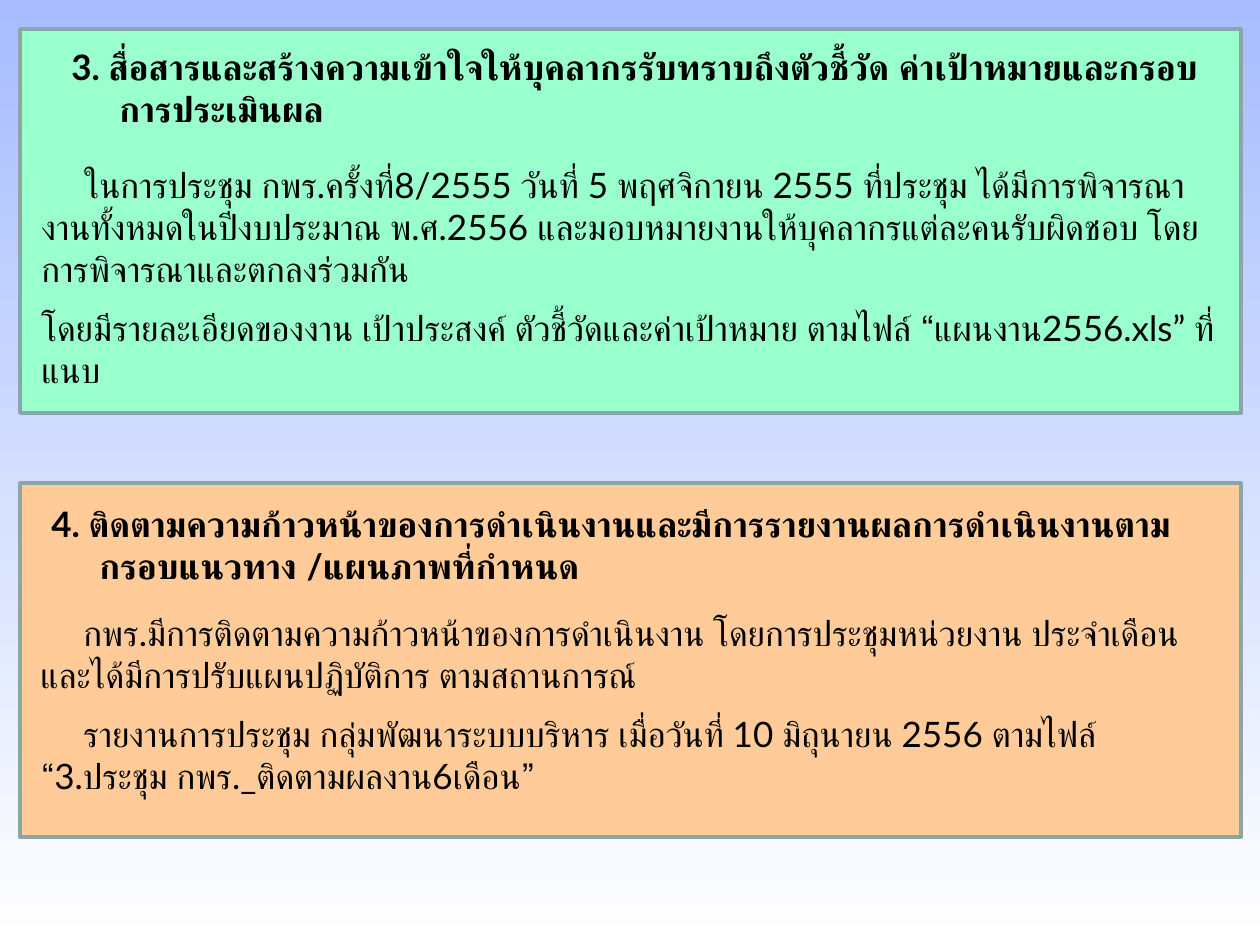
"""Build a slide with two panels on communicating and following up work plans."""
import pptx
import pptx.dml.color
import pptx.enum.shapes
import pptx.enum.text
import pptx.util

THEME = {
    "sky": ("A7BCFF", "FFFFFF"), "border": "8AA6A8", "text": "000000",
    "font": "Lato", "size": 20, "gap": 10, "line": 2,
}
HANG, FIRST = 48, 43

PANELS = [
    {
        "fill": "FFCC99", "box": (20, 483, 1221, 354),
        "head": "4. ติดตามความก้าวหน้าของการดำเนินงานและมีการรายงานผลการดำเนินงานตามกรอบแนวทาง /แผนภาพที่กำหนด",
        "head_box": (39, 496, 1191, 97),
        "body": [
            ("กพร.มีการติดตามความก้าวหน้าของการดำเนินงาน โดยการประชุมหน่วยงาน ประจำเดือน และได้มีการปรับแผนปฏิบัติการ ตามสถานการณ์", FIRST),
            ("รายงานการประชุม กลุ่มพัฒนาระบบบริหาร เมื่อวันที่ 10 มิถุนายน 2556 ตามไฟล์ “3.ประชุม กพร._ติดตามผลงาน6เดือน”", FIRST),
        ],
        "body_box": (28, 605, 1207, 204),
    },
    {
        "fill": "99FFCC", "box": (20, 29, 1221, 384),
        "head": "3. สื่อสารและสร้างความเข้าใจให้บุคลากรรับทราบถึงตัวชี้วัด ค่าเป้าหมายและกรอบการประเมินผล",
        "head_box": (59, 39, 1162, 97),
        "body": [
            ("ในการประชุม กพร.ครั้งที่8/2555 วันที่ 5 พฤศจิกายน 2555 ที่ประชุม ได้มีการพิจารณางานทั้งหมดในปีงบประมาณ พ.ศ.2556 และมอบหมายงานให้บุคลากรแต่ละคนรับผิดชอบ โดยการพิจารณาและตกลงร่วมกัน", FIRST),
            ("โดยมีรายละเอียดของงาน เป้าประสงค์ ตัวชี้วัดและค่าเป้าหมาย ตามไฟล์ “แผนงาน2556.xls” ที่แนบ", 0),
        ],
        "body_box": (29, 157, 1207, 246),
    },
]


def px(n):
    return pptx.util.Emu(round(n * 914400 / 126))


def rgb(name):
    return pptx.dml.color.RGBColor.from_string(name)


def add_panel(s, fill, box):
    sp = s.shapes.add_shape(pptx.enum.shapes.MSO_SHAPE.RECTANGLE, *map(px, box))
    sp.shadow.inherit = False
    sp.fill.solid()
    sp.fill.fore_color.rgb = rgb(fill)
    sp.line.color.rgb = rgb(THEME["border"])
    sp.line.width = pptx.util.Pt(THEME["line"])


def add_text(s, box, paragraphs, bold=False, margin=0):
    tf = s.shapes.add_textbox(*map(px, box)).text_frame
    tf.word_wrap = True
    tf.auto_size = pptx.enum.text.MSO_AUTO_SIZE.SHAPE_TO_FIT_TEXT
    font = {"name": THEME["font"], "size": pptx.util.Pt(THEME["size"]), "bold": bold}
    for i, (text, indent) in enumerate(paragraphs):
        p = tf.add_paragraph() if i else tf.paragraphs[0]
        if i:
            p.space_before = pptx.util.Pt(THEME["gap"])
        pPr = p._p.get_or_add_pPr()
        for key, value in {"marL": margin, "indent": indent}.items():
            pPr.set(key, str(px(value)))
        r = p.add_run()
        r.text = text
        for key, value in font.items():
            setattr(r.font, key, value)
        r.font.color.rgb = rgb(THEME["text"])


def main():
    prs = pptx.Presentation()
    prs.slide_width, prs.slide_height = px(1260), px(945)
    s = prs.slides.add_slide(prs.slide_layouts[6])
    sky = s.background.fill
    sky.gradient()
    sky.gradient_angle = 270
    for stop, color, position in zip(sky.gradient_stops, THEME["sky"], (0, 1)):
        stop.color.rgb = rgb(color)
        stop.position = position
    for panel in PANELS:
        add_panel(s, panel["fill"], panel["box"])
    for panel in PANELS:
        add_text(s, panel["head_box"], [(panel["head"], -HANG)], bold=True, margin=HANG)
        add_text(s, panel["body_box"], panel["body"])
    prs.save("out.pptx")


if __name__ == "__main__":
    main()
